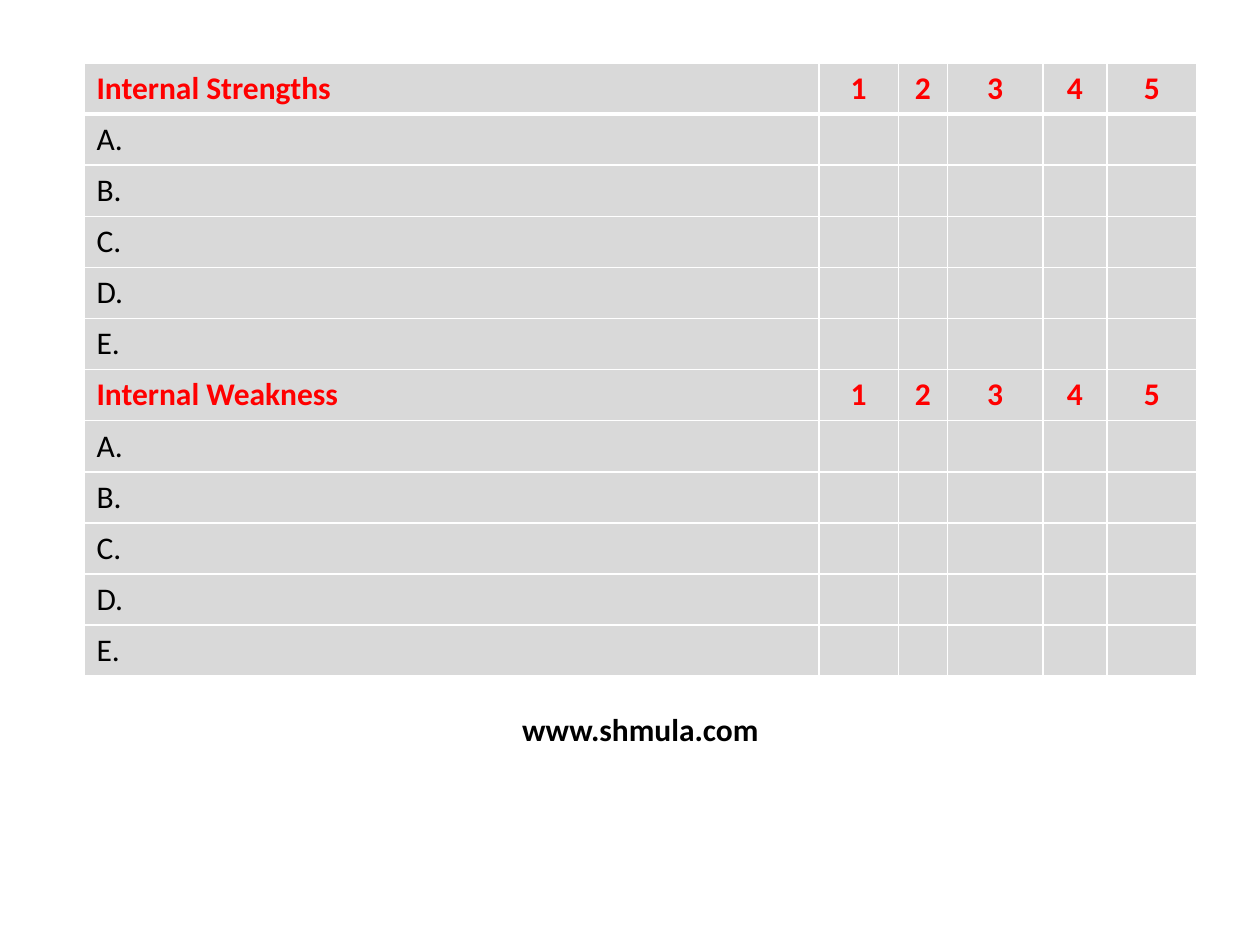
import pptx
import pptx.util
import pptx.dml.color
import pptx.enum.text
import pptx.oxml
import pptx.oxml.ns
from dataclasses import dataclass

Pt = pptx.util.Pt
RGB = pptx.dml.color.RGBColor
ALIGN = pptx.enum.text.PP_ALIGN

RED = RGB(0xFF, 0x00, 0x00)
BLACK = RGB(0x00, 0x00, 0x00)
GRAY = RGB(0xD9, 0xD9, 0xD9)
WHITE = RGB(0xFF, 0xFF, 0xFF)

FONT = "Calibri"
SIZE = 18
COLS = [420, 45.4, 28, 54.6, 36.6, 51.4]
ROW = 29.2
SCORES = "12345"
ITEMS = "ABCDE"
THIN, THICK = 1, 3


@dataclass
class Line:
    texts: list[str]
    color: RGB
    bold: bool


def write(para, text: str, color: RGB, bold: bool, align) -> None:
    para.alignment = align
    run = para.add_run()
    run.text = text
    font = run.font
    font.name, font.size, font.bold = FONT, Pt(SIZE), bold
    font.color.rgb = color


def edge(cell, sides: dict[str, float]) -> None:
    """Draw white borders; they must come before the cell's fill."""
    props = cell._tc.get_or_add_tcPr()
    for spot, (side, width) in enumerate(sides.items()):
        props.insert(spot, pptx.oxml.parse_xml(
            f'<a:ln{side} {pptx.oxml.ns.nsdecls("a")} w="{Pt(width)}">'
            f'<a:solidFill><a:srgbClr val="{WHITE}"/></a:solidFill></a:ln{side}>'))


def group(title: str) -> list[Line]:
    """Give a heading line with its scores, then one line per item."""
    head = Line([title, *SCORES], RED, True)
    return [head] + [Line([f"{item}."], BLACK, False) for item in ITEMS]


def grid(slide, lines: list[Line]) -> None:
    frame = slide.shapes.add_table(len(lines), len(COLS), Pt(48), Pt(36),
                                   Pt(sum(COLS)), Pt(ROW * len(lines)))
    table = frame.table
    for col, width in zip(table.columns, COLS):
        col.width = Pt(width)
    for r, line in enumerate(lines):
        table.rows[r].height = Pt(ROW)
        for c, cell in enumerate(table.rows[r].cells):
            cell.fill.solid()
            cell.fill.fore_color.rgb = GRAY
            cell.vertical_anchor = pptx.enum.text.MSO_ANCHOR.MIDDLE
            edge(cell, {"L": THIN, "R": THIN,
                        "T": THICK if r == 1 else THIN,
                        "B": THICK if r == 0 else THIN})
            if c < len(line.texts):
                write(cell.text_frame.paragraphs[0], line.texts[c],
                      line.color, line.bold, ALIGN.CENTER if c else ALIGN.LEFT)


def main() -> None:
    deck = pptx.Presentation()
    deck.slide_width, deck.slide_height = Pt(720), Pt(540)
    slide = deck.slides.add_slide(deck.slide_layouts[6])
    grid(slide, group("Internal Strengths") + group("Internal Weakness"))
    site = slide.shapes.add_textbox(Pt(270), Pt(402), Pt(192), Pt(29))
    site.text_frame.word_wrap = True
    write(site.text_frame.paragraphs[0], "www.shmula.com", BLACK, True, ALIGN.CENTER)
    deck.save("out.pptx")


if __name__ == "__main__":
    main()
